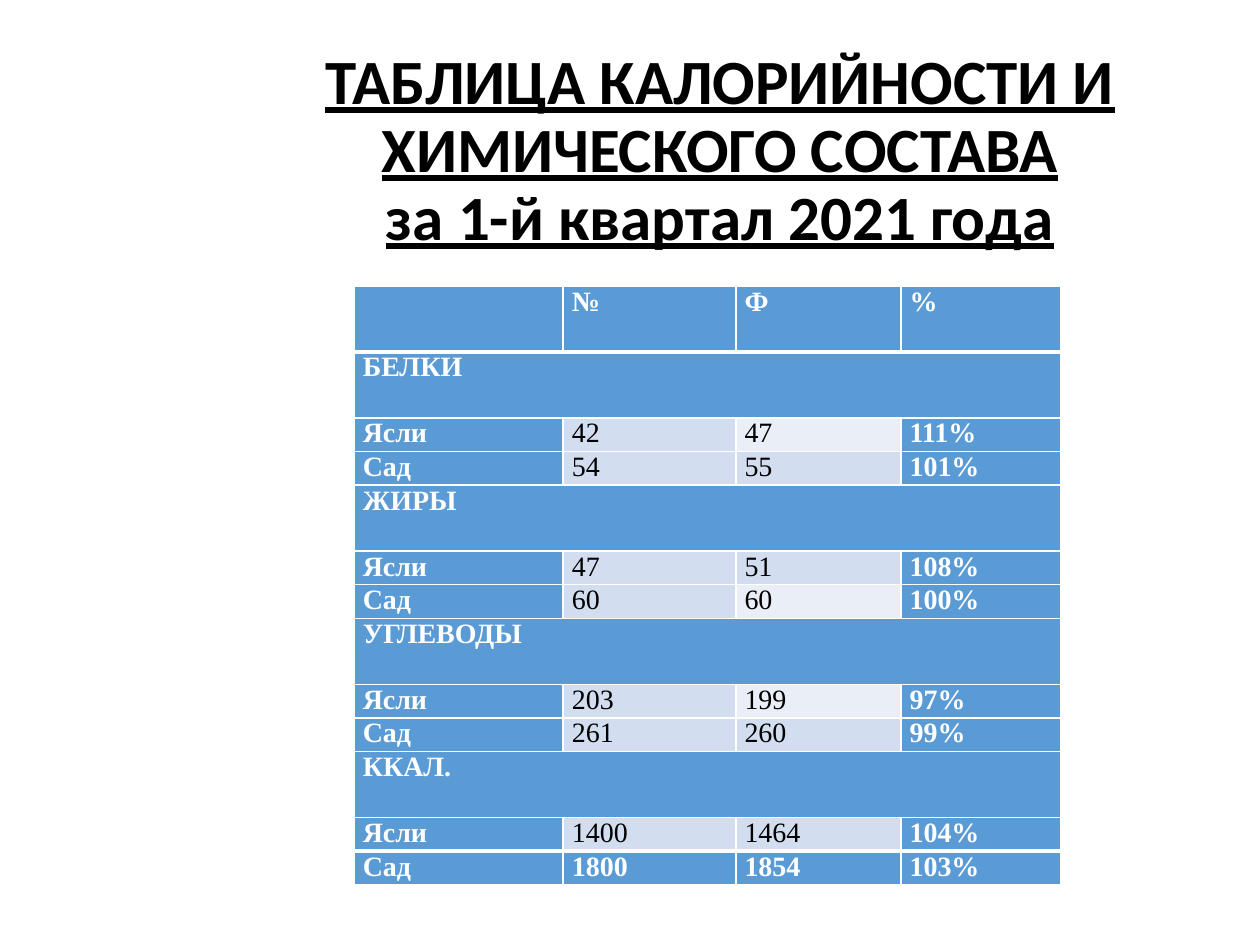
from lxml.etree import SubElement
from pptx import Presentation
from pptx.dml.color import RGBColor
from pptx.enum.text import MSO_ANCHOR, PP_ALIGN
from pptx.oxml.ns import qn
from pptx.util import Inches, Pt

WIDTH, HEIGHT = 10, 7.5
BLUE, PALE, PALEST = "5B9BD5", "D2DEEF", "EAEFF7"
WHITE, BLACK = "FFFFFF", "000000"

TITLE = ["ТАБЛИЦА КАЛОРИЙНОСТИ И", "ХИМИЧЕСКОГО СОСТАВА", "за 1-й квартал 2021 года"]
COLUMN_WIDTHS = [1.66, 1.37, 1.31, 1.27]
ROW_UNIT = 4.71 / 18  # five double rows and eight single ones
ROWS = [
    ["", "№", "Ф", "%"],
    ["БЕЛКИ"],
    ["Ясли", "42", "47", "111%"],
    ["Сад", "54", "55", "101%"],
    ["ЖИРЫ"],
    ["Ясли", "47", "51", "108%"],
    ["Сад", "60", "60", "100%"],
    ["УГЛЕВОДЫ"],
    ["Ясли", "203", "199", "97%"],
    ["Сад", "261", "260", "99%"],
    ["ККАЛ."],
    ["Ясли", "1400", "1464", "104%"],
    ["Сад", "1800", "1854", "103%"],
]
LAST = len(ROWS) - 1
PALEST_CELLS = {(2, 2), (6, 2), (8, 2)}  # row, column


def color(value):
    return RGBColor.from_string(value)


def style_font(para, name, size, value, bold, underline=False):
    for span in para.runs:
        font = span.font
        font.name, font.size, font.bold = name, Pt(size), bold
        font.underline = underline
        font.color.rgb = color(value)


def add_title(page):
    box = page.shapes.add_textbox(Inches(2.12), Inches(0.56), Inches(7.19), Inches(1.83))
    frame = box.text_frame
    frame.word_wrap = True
    frame.vertical_anchor = MSO_ANCHOR.MIDDLE
    frame.margin_bottom = Inches(0.59)  # lifts the lines clear of the table
    para = frame.paragraphs[0]
    para.text = "\v".join(TITLE)
    para.alignment = PP_ALIGN.CENTER
    para.line_spacing = 0.9
    style_font(para, "Calibri", 36, BLACK, bold=True, underline=True)


def set_borders(cell, top, bottom):
    properties = cell._tc.get_or_add_tcPr()
    for side, points in (("L", 1), ("R", 1), ("T", top), ("B", bottom)):
        line = SubElement(properties, qn(f"a:ln{side}"), w=str(Pt(points)))
        SubElement(SubElement(line, qn("a:solidFill")), qn("a:srgbClr"), val=WHITE)


def cell_fill(row, column):
    if row in (0, LAST) or len(ROWS[row]) == 1 or column in (0, 3):
        return BLUE
    return PALEST if (row, column) in PALEST_CELLS else PALE


def format_cell(cell, row, column, text):
    # Heavy rules set off the header row and the last row
    set_borders(cell, 3 if row in (1, LAST) else 1, 3 if row in (0, LAST - 1) else 1)
    fill = cell_fill(row, column)
    cell.fill.solid()
    cell.fill.fore_color.rgb = color(fill)
    cell.margin_left = cell.margin_right = Inches(0.07)
    cell.margin_top = cell.margin_bottom = 0
    cell.text_frame.text = text
    strong = fill == BLUE
    style_font(cell.text_frame.paragraphs[0], "Times New Roman", 16,
               WHITE if strong else BLACK, strong)


def add_nutrition_table(page):
    frame = page.shapes.add_table(len(ROWS), len(COLUMN_WIDTHS), Inches(2.81), Inches(2.27),
                                  Inches(sum(COLUMN_WIDTHS)), Inches(18 * ROW_UNIT))
    table = frame.table
    table.horz_banding = False
    for column, width in zip(table.columns, COLUMN_WIDTHS):
        column.width = Inches(width)
    for row, texts in enumerate(ROWS):
        is_section = len(texts) == 1
        units = 2 if row == 0 or is_section else 1
        table.rows[row].height = Inches(units * ROW_UNIT)
        for column in range(len(COLUMN_WIDTHS)):
            text = texts[column] if column < len(texts) else ""
            format_cell(table.cell(row, column), row, column, text)
        if is_section:
            table.cell(row, 0).merge(table.cell(row, len(COLUMN_WIDTHS) - 1))


def main():
    deck = Presentation()
    deck.slide_width, deck.slide_height = Inches(WIDTH), Inches(HEIGHT)
    page = deck.slides.add_slide(deck.slide_layouts[6])
    add_title(page)
    add_nutrition_table(page)
    deck.save("out.pptx")


if __name__ == "__main__":
    main()
